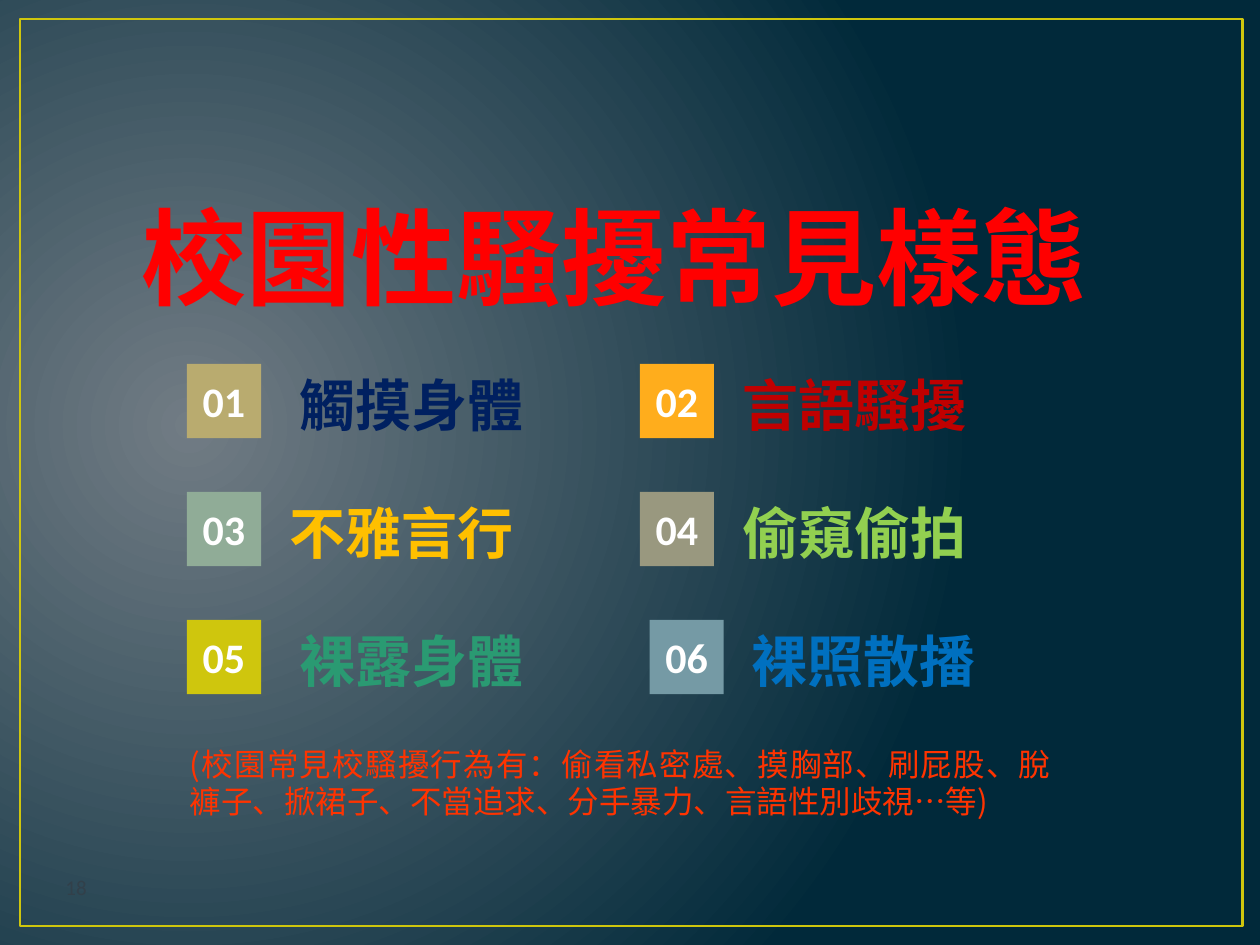
from lxml import etree
from pptx import Presentation
from pptx.dml.color import RGBColor
from pptx.enum.shapes import MSO_SHAPE
from pptx.enum.text import MSO_ANCHOR, MSO_AUTO_SIZE, PP_ALIGN
from pptx.oxml.ns import qn
from pptx.util import Pt

RECTANGLE = MSO_SHAPE.RECTANGLE
TOP, MIDDLE = MSO_ANCHOR.TOP, MSO_ANCHOR.MIDDLE
FIT_SHAPE = MSO_AUTO_SIZE.SHAPE_TO_FIT_TEXT
CENTER, JUSTIFY, LEFT = PP_ALIGN.CENTER, PP_ALIGN.JUSTIFY, PP_ALIGN.LEFT

LATIN, CJK = "Calibri", "Noto Sans CJK SC"
GLOW = RGBColor(0x71, 0x7C, 0x84)
NIGHT = RGBColor(0x01, 0x29, 0x3A)
OLIVE = RGBColor(0xCF, 0xC6, 0x0D)
WHITE = RGBColor(0xFF, 0xFF, 0xFF)
RED = RGBColor(0xFF, 0x00, 0x00)
ORANGE_RED = RGBColor(0xFF, 0x33, 0x00)
SLATE = RGBColor(0x32, 0x40, 0x4A)
SAND = RGBColor(0xB9, 0xAB, 0x6F)
ORANGE = RGBColor(0xFF, 0xAD, 0x1C)
SAGE = RGBColor(0x90, 0xAC, 0x97)
TAUPE = RGBColor(0x99, 0x98, 0x7F)
STEEL = RGBColor(0x75, 0x9A, 0xA5)
NAVY = RGBColor(0x00, 0x20, 0x60)
CRIMSON = RGBColor(0xC0, 0x00, 0x00)
GOLD = RGBColor(0xFF, 0xC0, 0x00)
LIME = RGBColor(0x92, 0xD0, 0x50)
JADE = RGBColor(0x2A, 0x9A, 0x72)
BLUE = RGBColor(0x00, 0x70, 0xC0)


def write_text(shape, text, *, size, color, font=CJK, bold=False,
               align=JUSTIFY, anchor=TOP, wrap=True, inset=(7.2, 3.6)):
    frame = shape.text_frame
    frame.word_wrap = wrap
    frame.vertical_anchor = anchor
    frame.margin_left = frame.margin_right = Pt(inset[0])
    frame.margin_top = frame.margin_bottom = Pt(inset[1])
    paragraph = frame.paragraphs[0]
    paragraph.alignment = align
    run = paragraph.add_run()
    run.text = text
    run.font.size = Pt(size)
    run.font.bold = bold
    run.font.color.rgb = color
    run.font.name = font
    east_asian = etree.SubElement(run.font._element, qn("a:ea"))
    east_asian.set("typeface", font)


prs = Presentation()
prs.slide_width, prs.slide_height = Pt(720), Pt(540)
slide = prs.slides.add_slide(prs.slide_layouts[5])
shapes = slide.shapes

# Background: a glow centred left of the middle
backdrop = slide.background.fill
backdrop.gradient()
for stop, color in zip(backdrop.gradient_stops, (GLOW, NIGHT)):
    stop.color.rgb = color
gradient = slide._element.find(".//" + qn("a:gradFill"))
gradient.remove(gradient.find(qn("a:lin")))
radial = etree.SubElement(gradient, qn("a:path"), {"path": "circle"})
etree.SubElement(radial, qn("a:fillToRect"),
                 {"l": "15000", "t": "50000", "r": "85000", "b": "60000"})

border = shapes.add_shape(RECTANGLE, Pt(11.5), Pt(10.8), Pt(698.4), Pt(518.4))
border.shadow.inherit = False
border.fill.background()
border.line.color.rgb = OLIVE
border.line.width = Pt(1.5)

title = shapes.title
title.left, title.top, title.width, title.height = Pt(73.5), Pt(106.5), Pt(568), Pt(79.2)
write_text(title, "校園性騷擾常見樣態", size=60, color=RED, bold=True)
title.text_frame.auto_size = FIT_SHAPE

# Six behaviours in two columns: number, badge x, badge fill, label x, label, label colour
behaviours = [
    ("01", 106.8, SAND, 164.3, "觸摸身體", NAVY),
    ("02", 365.6, ORANGE, 417, "言語騷擾", CRIMSON),
    ("03", 106.8, SAGE, 158.6, "不雅言行", GOLD),
    ("04", 365.6, TAUPE, 417, "偷窺偷拍", LIME),
    ("05", 106.8, OLIVE, 164.3, "裸露身體", JADE),
    ("06", 371.2, STEEL, 422.6, "裸照散播", BLUE),
]
FIRST_ROW, ROW_PITCH, BADGE = 208, 73.15, 42.4
for index, (number, badge_x, fill, label_x, behaviour, color) in enumerate(behaviours):
    y = Pt(FIRST_ROW + index // 2 * ROW_PITCH)
    badge = shapes.add_shape(RECTANGLE, Pt(badge_x), y, Pt(BADGE), Pt(BADGE))
    badge.shadow.inherit = False
    badge.fill.solid()
    badge.fill.fore_color.rgb = fill
    badge.line.fill.background()
    write_text(badge, number, size=24, color=WHITE, font=LATIN, bold=True,
               align=CENTER, anchor=MIDDLE, inset=(2.9, 2.9))
    label = shapes.add_textbox(Pt(label_x), y, Pt(142.5), Pt(45.4))
    write_text(label, behaviour, size=32, color=color, bold=True, wrap=False)
    label.text_frame.auto_size = FIT_SHAPE

examples = shapes.add_textbox(Pt(101.5), Pt(422), Pt(506.2), Pt(50.4))
write_text(examples, "(校園常見校騷擾行為有：偷看私密處、摸胸部、刷屁股、脫褲子、掀裙子、"
           "不當追求、分手暴力、言語性別歧視…等) ", size=18, color=ORANGE_RED)
examples.text_frame.auto_size = FIT_SHAPE

page_number = shapes.add_textbox(Pt(30.3), Pt(493), Pt(60), Pt(28))
write_text(page_number, "18", size=12, color=SLATE, font=LATIN,
           align=LEFT, anchor=MIDDLE)

prs.save("out.pptx")
